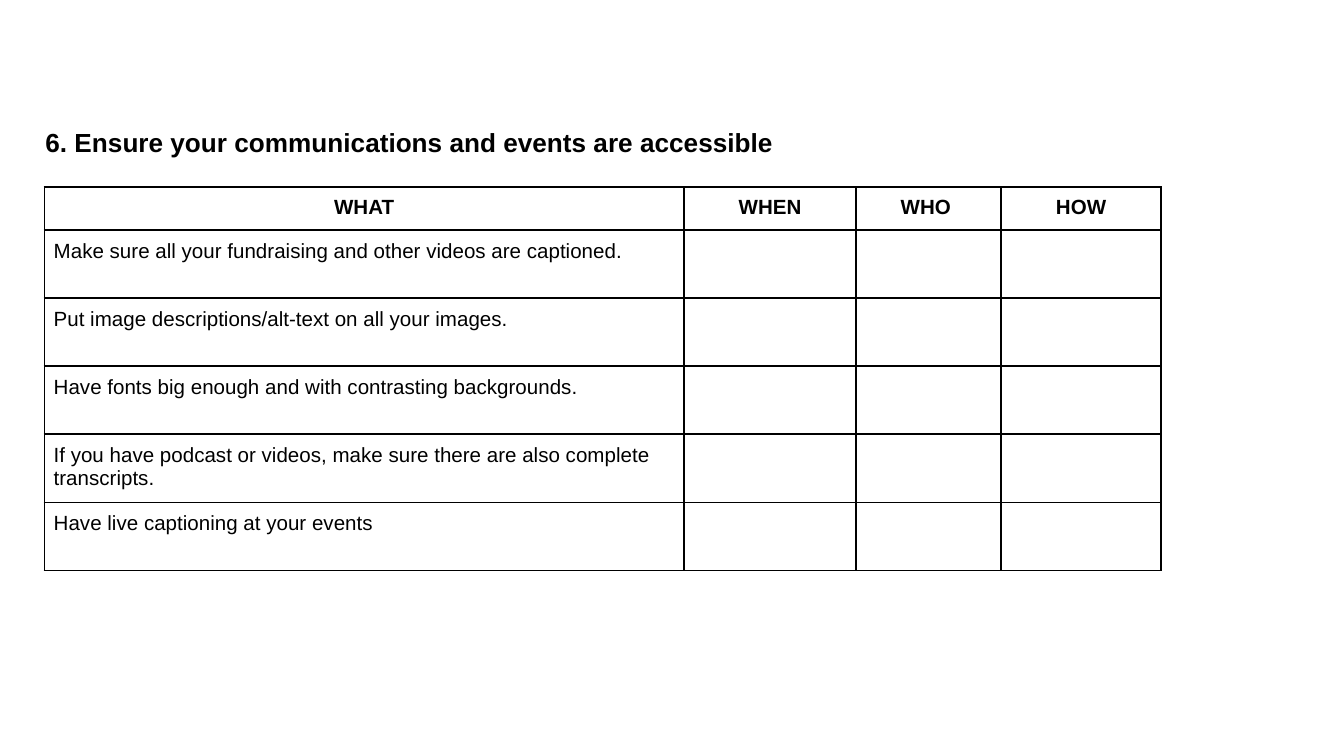
from dataclasses import dataclass

from lxml import etree
from pptx import Presentation
from pptx import util as u
from pptx.dml import color
from pptx.enum import text
from pptx.oxml import ns

COLORS = {"ink": "000000", "paper": "FFFFFF"}
FONT = "Arial"
CELL_MARGIN = u.Inches(0.07)


@dataclass
class Column:
    heading: str
    width: float


COLUMNS = [
    Column("WHAT", 4.76),
    Column("WHEN", 1.28),
    Column("WHO ", 1.08),
    Column("HOW", 1.19),
]
ACTIONS = [
    "Make sure all your fundraising and other videos are captioned.",
    "Put image descriptions/alt-text on all your images.",
    "Have fonts big enough and with contrasting backgrounds.",
    "If you have podcast or videos, make sure there are also complete transcripts.",
    "Have live captioning at your events",
]
TABLE_HEIGHT, HEADER_HEIGHT = u.Inches(2.85), u.Inches(0.32)
ACTION_HEIGHT = (TABLE_HEIGHT - HEADER_HEIGHT) // len(ACTIONS)


def rgb(name: str) -> color.RGBColor:
    return color.RGBColor.from_string(COLORS[name])


def write(paragraph, words: str, size: float, bold: bool) -> None:
    paragraph.text = words
    font = paragraph.font
    font.name, font.size, font.bold = FONT, u.Pt(size), bold
    font.color.rgb = rgb("ink")


def add_borders(cell) -> None:
    properties = cell._tc.get_or_add_tcPr()
    for position, side in enumerate(("lnL", "lnR", "lnT", "lnB")):
        line = etree.Element(ns.qn(f"a:{side}"), w=str(u.Pt(1)))
        fill = etree.SubElement(line, ns.qn("a:solidFill"))
        etree.SubElement(fill, ns.qn("a:srgbClr"), val=COLORS["ink"])
        properties.insert(position, line)


def fill_cell(cell, words: str, is_header: bool) -> None:
    cell.margin_left = cell.margin_right = CELL_MARGIN
    cell.margin_top = cell.margin_bottom = CELL_MARGIN
    cell.fill.background()
    add_borders(cell)
    paragraph = cell.text_frame.paragraphs[0]
    write(paragraph, words, 11, is_header)
    if is_header:
        paragraph.alignment = text.PP_ALIGN.CENTER


def add_title(slide, words: str) -> None:
    box = slide.shapes.add_textbox(
        u.Inches(0.24), u.Inches(0.89), u.Inches(6.13), u.Inches(0.34)
    )
    box.text_frame.word_wrap = True
    box.text_frame.auto_size = text.MSO_AUTO_SIZE.SHAPE_TO_FIT_TEXT
    write(box.text_frame.paragraphs[0], words, 14, True)


def add_action_table(slide) -> None:
    rows = [[column.heading for column in COLUMNS]]
    rows += [[action] + [""] * (len(COLUMNS) - 1) for action in ACTIONS]
    table = slide.shapes.add_table(
        len(rows), len(COLUMNS),
        u.Inches(0.33), u.Inches(1.39),
        u.Inches(sum(column.width for column in COLUMNS)), TABLE_HEIGHT,
    ).table
    table.horz_banding = False
    for index, column in enumerate(COLUMNS):
        table.columns[index].width = u.Inches(column.width)
    for row_index, row in enumerate(rows):
        is_header = row_index == 0
        table.rows[row_index].height = HEADER_HEIGHT if is_header else ACTION_HEIGHT
        for column_index, words in enumerate(row):
            fill_cell(table.cell(row_index, column_index), words, is_header)


def main() -> None:
    presentation = Presentation()
    presentation.slide_width = u.Inches(10)
    presentation.slide_height = u.Inches(10) * 9 // 16
    slide = presentation.slides.add_slide(presentation.slide_layouts[6])
    slide.background.fill.solid()
    slide.background.fill.fore_color.rgb = rgb("paper")
    add_title(slide, "6. Ensure your communications and events are accessible")
    add_action_table(slide)
    presentation.save("out.pptx")


if __name__ == "__main__":
    main()
